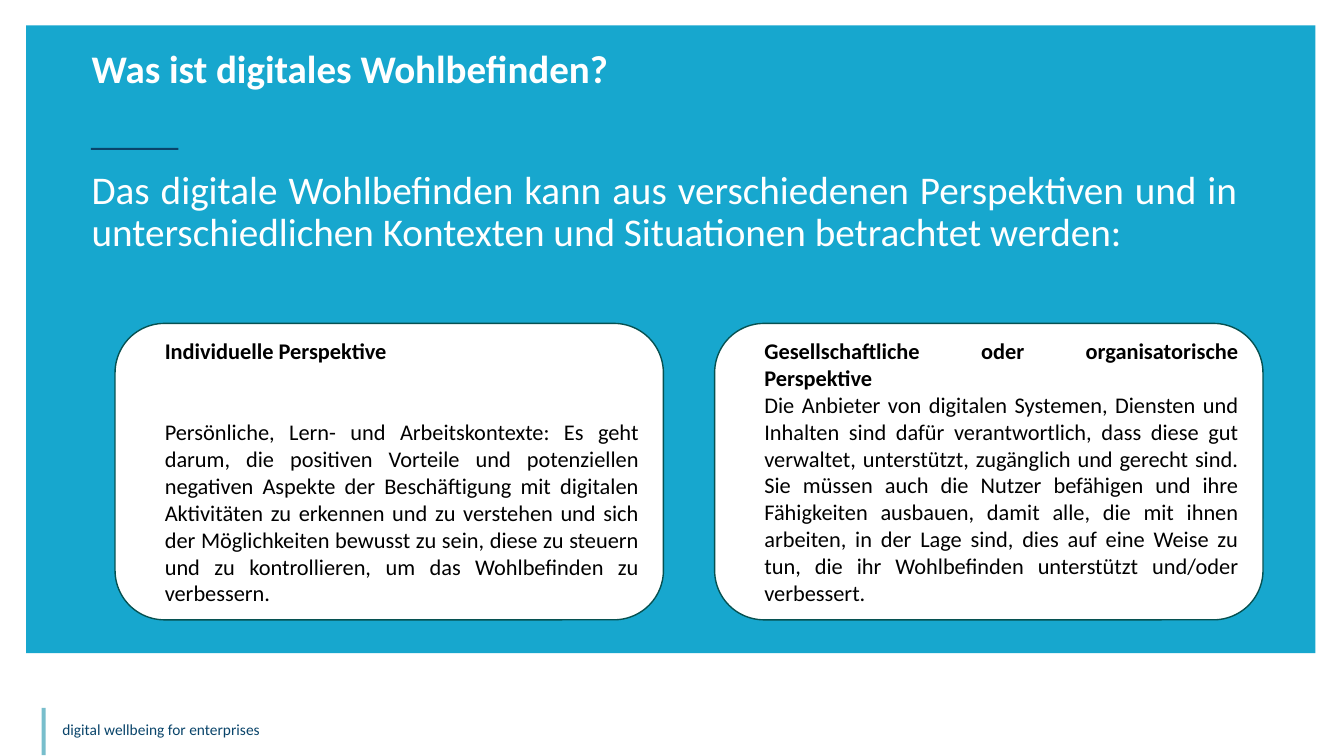
"""Build a slide on two perspectives of digital wellbeing."""
from dataclasses import dataclass

from pptx import Presentation
from pptx.dml.color import RGBColor
from pptx.enum.shapes import MSO_SHAPE as Preset
from pptx.enum.text import MSO_ANCHOR as Anchor, PP_ALIGN as Align
from pptx.shapes.autoshape import Shape
from pptx.slide import Slide
from pptx.util import Cm, Pt

FONT = "Calibri"
WHITE, BLACK, NAVY = "FFFFFF", "000000", "09446A"
INDENT = 0.64
CARD_LEFT, CARD_TOP, CARD_WIDTH, CARD_HEIGHT, CARD_PITCH = 2.9, 8.15, 13.82, 7.47, 15.11


@dataclass(frozen=True)
class Box:
    left: float
    top: float
    width: float
    height: float

    def lengths(self) -> tuple[Cm, Cm, Cm, Cm]:
        return Cm(self.left), Cm(self.top), Cm(self.width), Cm(self.height)


@dataclass(frozen=True)
class Block:
    box: Box
    fill: str


@dataclass(frozen=True)
class Text:
    content: str
    size: float
    color: str
    bold: bool = False
    align: Align = Align.LEFT
    indent: float = INDENT
    line_spacing: float = 1.0
    before: float = 0
    after: float = 0


@dataclass(frozen=True)
class Label:
    box: Box
    text: Text


@dataclass(frozen=True)
class Card:
    heading: str
    body: str
    heading_gap: float = 0


BLOCKS = [
    Block(Box(0.66, 0.64, 32.49, 15.82), "17A7CE"),
    Block(Box(2.29, 3.73, 2.21, 0.05), NAVY),
    Block(Box(1.05, 17.84, 0.1, 1.19), "78BECC"),
]

LABELS = [
    Label(Box(1.32, 18.03, 31.75, 0.74),
          Text("digital wellbeing for enterprises", 11, NAVY, indent=0)),
    Label(Box(1.42, 4.17, 30.02, 10.74),
          Text("Das digitale Wohlbefinden kann aus verschiedenen Perspektiven und in "
               "unterschiedlichen Kontexten und Situationen betrachtet werden:",
               28, WHITE, align=Align.JUSTIFY, line_spacing=0.9, before=10)),
    Label(Box(1.42, 1.32, 15.49, 2.11),
          Text("Was ist digitales Wohlbefinden?", 27.9, WHITE, bold=True,
               line_spacing=0.7, before=10)),
]

CARDS = [
    Card("Individuelle Perspektive",
         "Persönliche, Lern- und Arbeitskontexte: Es geht darum, die positiven Vorteile und "
         "potenziellen negativen Aspekte der Beschäftigung mit digitalen Aktivitäten zu "
         "erkennen und zu verstehen und sich der Möglichkeiten bewusst zu sein, diese zu "
         "steuern und zu kontrollieren, um das Wohlbefinden zu verbessern.",
         heading_gap=39),
    Card("Gesellschaftliche oder organisatorische Perspektive",
         "Die Anbieter von digitalen Systemen, Diensten und Inhalten sind dafür "
         "verantwortlich, dass diese gut verwaltet, unterstützt, zugänglich und gerecht sind. "
         "Sie müssen auch die Nutzer befähigen und ihre Fähigkeiten ausbauen, damit alle, die "
         "mit ihnen arbeiten, in der Lage sind, dies auf eine Weise zu tun, die ihr "
         "Wohlbefinden unterstützt und/oder verbessert."),
]


def rgb(color: str) -> RGBColor:
    """Turn a hex string into a colour."""
    return RGBColor.from_string(color)


def write(shape: Shape, texts: list[Text]) -> None:
    """Write one paragraph for each text."""
    frame = shape.text_frame
    frame.word_wrap = True
    for index, text in enumerate(texts):
        paragraph = frame.add_paragraph() if index else frame.paragraphs[0]
        paragraph.alignment = text.align
        paragraph.line_spacing = text.line_spacing
        paragraph.space_before = Pt(text.before)
        paragraph.space_after = Pt(text.after)
        paragraph._p.get_or_add_pPr().set("marL", str(Cm(text.indent)))
        run = paragraph.add_run()
        run.text = text.content
        run.font.name = FONT
        run.font.size = Pt(text.size)
        run.font.bold = text.bold
        run.font.color.rgb = rgb(text.color)


def add_filled(slide: Slide, preset: Preset, block: Block) -> Shape:
    """Add a filled shape without line or shadow."""
    shape = slide.shapes.add_shape(preset, *block.box.lengths())
    shape.shadow.inherit = False
    shape.fill.solid()
    shape.fill.fore_color.rgb = rgb(block.fill)
    shape.line.fill.background()
    return shape


def add_label(slide: Slide, label: Label) -> None:
    """Add a text box."""
    write(slide.shapes.add_textbox(*label.box.lengths()), [label.text])


def add_card(slide: Slide, card: Card, column: int) -> None:
    """Add a rounded card with heading and body."""
    box = Box(CARD_LEFT + column * CARD_PITCH, CARD_TOP, CARD_WIDTH, CARD_HEIGHT)
    shape = add_filled(slide, Preset.ROUNDED_RECTANGLE, Block(box, WHITE))
    shape.line.color.rgb = rgb("065151")
    shape.line.width = Pt(1)
    shape.text_frame.vertical_anchor = Anchor.MIDDLE
    write(shape, [
        Text(card.heading, 16, BLACK, bold=True, align=Align.JUSTIFY, after=card.heading_gap),
        Text(card.body, 16, BLACK, align=Align.JUSTIFY),
    ])


def main() -> None:
    """Build and save the presentation."""
    presentation = Presentation()
    presentation.slide_width, presentation.slide_height = Cm(33.87), Cm(19.05)
    slide = presentation.slides.add_slide(presentation.slide_layouts[6])
    for block in BLOCKS:
        add_filled(slide, Preset.RECTANGLE, block)
    for label in LABELS:
        add_label(slide, label)
    for column, card in enumerate(CARDS):
        add_card(slide, card, column)
    presentation.save("out.pptx")


if __name__ == "__main__":
    main()
